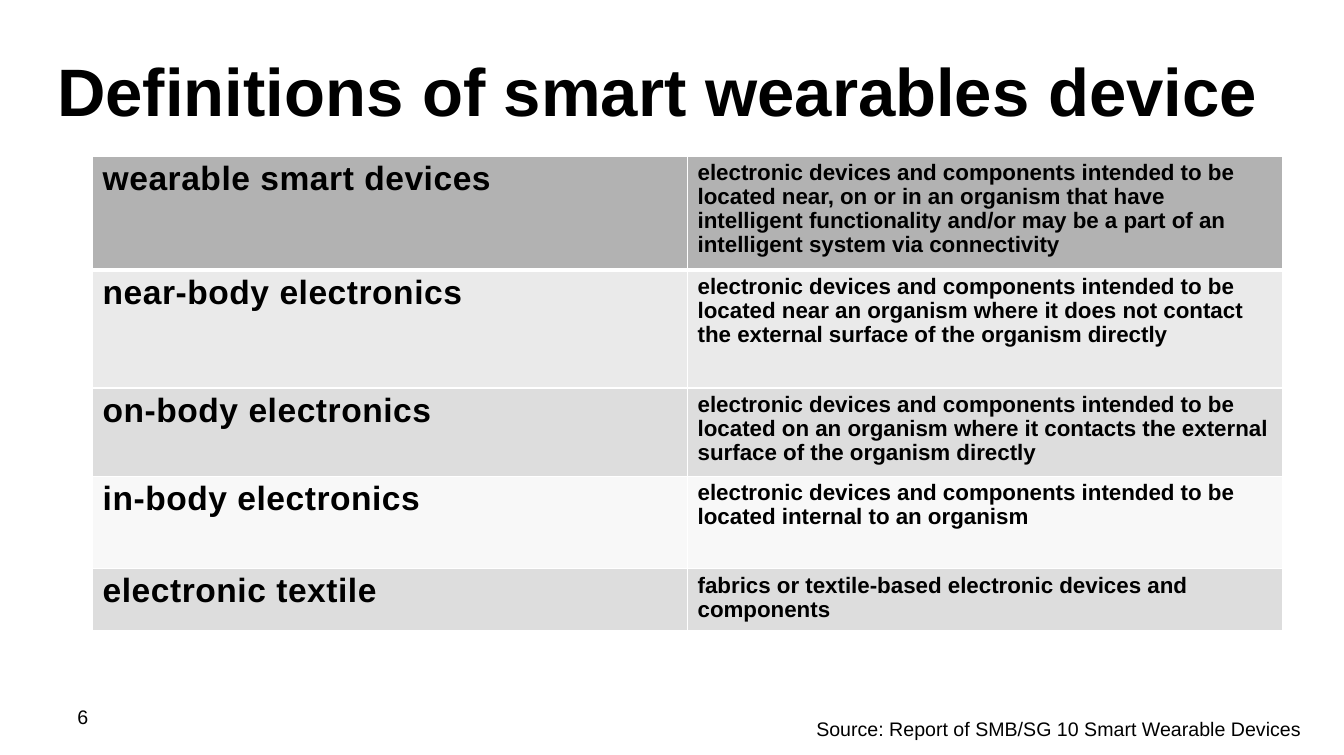
from lxml.etree import SubElement
from pptx import Presentation
from pptx.dml.color import RGBColor
from pptx.enum.text import MSO_ANCHOR
from pptx.oxml.ns import qn
from pptx.util import Inches, Pt

BLACK = RGBColor(0x00, 0x00, 0x00)
HEADER_GRAY = RGBColor(0xB2, 0xB2, 0xB2)
LIGHT_GRAY = RGBColor(0xEA, 0xEA, 0xEA)
MID_GRAY = RGBColor(0xDD, 0xDD, 0xDD)
PALE_GRAY = RGBColor(0xF8, 0xF8, 0xF8)
WHITE = RGBColor(0xFF, 0xFF, 0xFF)

SLIDE_SIZE = (13.35, 7.5)
TITLE_BOX = (0.47, 0.39, 12.4, 1)
TABLE_BOX = (0.92, 1.55, 11.82, 4.62)
NUMBER_BOX = (0.67, 6.95, 2.17, 0.4)
SOURCE_BOX = (8.01, 7.07, 5.1, 0.34)

DEFINITIONS = [
    ("wearable smart devices",
     "electronic devices and components intended to be located near, on or in an organism that have "
     "intelligent functionality and/or may be a part of an intelligent system via connectivity",
     HEADER_GRAY, 1.09),
    ("near-body electronics",
     "electronic devices and components intended to be located near an organism where it does not "
     "contact the external surface of the organism directly",
     LIGHT_GRAY, 1.17),
    ("on-body electronics",
     "electronic devices and components intended to be located on an organism where it contacts "
     "the external surface of the organism directly",
     MID_GRAY, 0.84),
    ("in-body electronics",
     "electronic devices and components intended to be located internal to an organism",
     PALE_GRAY, 0.92),
    ("electronic textile",
     "fabrics or textile-based electronic devices and components",
     MID_GRAY, 0.6),
]


def write(frame, text, size, bold=False, tracking=0):
    """Set the text of a frame and format its run."""
    frame.text = text
    run = frame.paragraphs[0].runs[0]
    run.font.name = "Arial"
    run.font.size = Pt(size)
    run.font.bold = bold
    run.font.color.rgb = BLACK
    if tracking:
        run.font._element.set("spc", str(round(tracking * 100)))


def add_label(slide, box, text, size, bold=False, wrap=True, anchor=MSO_ANCHOR.TOP):
    """Place a line of text in the given box."""
    frame = slide.shapes.add_textbox(*map(Inches, box)).text_frame
    frame.word_wrap = wrap
    frame.vertical_anchor = anchor
    write(frame, text, size, bold)


def set_borders(cell, bottom_width):
    """Draw white borders round a cell."""
    properties = cell._tc.get_or_add_tcPr()
    widths = {"a:lnL": 1, "a:lnR": 1, "a:lnT": 1, "a:lnB": bottom_width}
    for position, (side, width) in enumerate(widths.items()):
        line = SubElement(properties, qn(side), w=str(Pt(width)))
        SubElement(SubElement(line, qn("a:solidFill")), qn("a:srgbClr"), val=str(WHITE))
        properties.insert(position, line)


def add_definitions(slide, box):
    """Fill the box with the table of terms and definitions."""
    table = slide.shapes.add_table(len(DEFINITIONS), 2, *map(Inches, box)).table
    total = sum(share for *_, share in DEFINITIONS)
    for index, (term, meaning, shade, share) in enumerate(DEFINITIONS):
        table.rows[index].height = Inches(box[3] * share / total)
        term_cell, meaning_cell = table.rows[index].cells
        write(term_cell.text_frame, term, 24, True, tracking=0.4)
        write(meaning_cell.text_frame, meaning, 16, True)
        for cell in (term_cell, meaning_cell):
            cell.text_frame.paragraphs[0].line_spacing = 0.97
            cell.fill.solid()
            cell.fill.fore_color.rgb = shade
            set_borders(cell, 3 if index == 0 else 1)


def main():
    """Build the slide and save it."""
    deck = Presentation()
    deck.slide_width, deck.slide_height = map(Inches, SLIDE_SIZE)
    slide = deck.slides.add_slide(deck.slide_layouts[6])
    add_label(slide, TITLE_BOX, "Definitions of smart wearables device", 48, True,
              anchor=MSO_ANCHOR.MIDDLE)
    add_label(slide, NUMBER_BOX, "6", 14)
    add_definitions(slide, TABLE_BOX)
    add_label(slide, SOURCE_BOX, "Source: Report of SMB/SG 10 Smart Wearable Devices", 14,
              wrap=False)
    deck.save("out.pptx")


if __name__ == "__main__":
    main()
